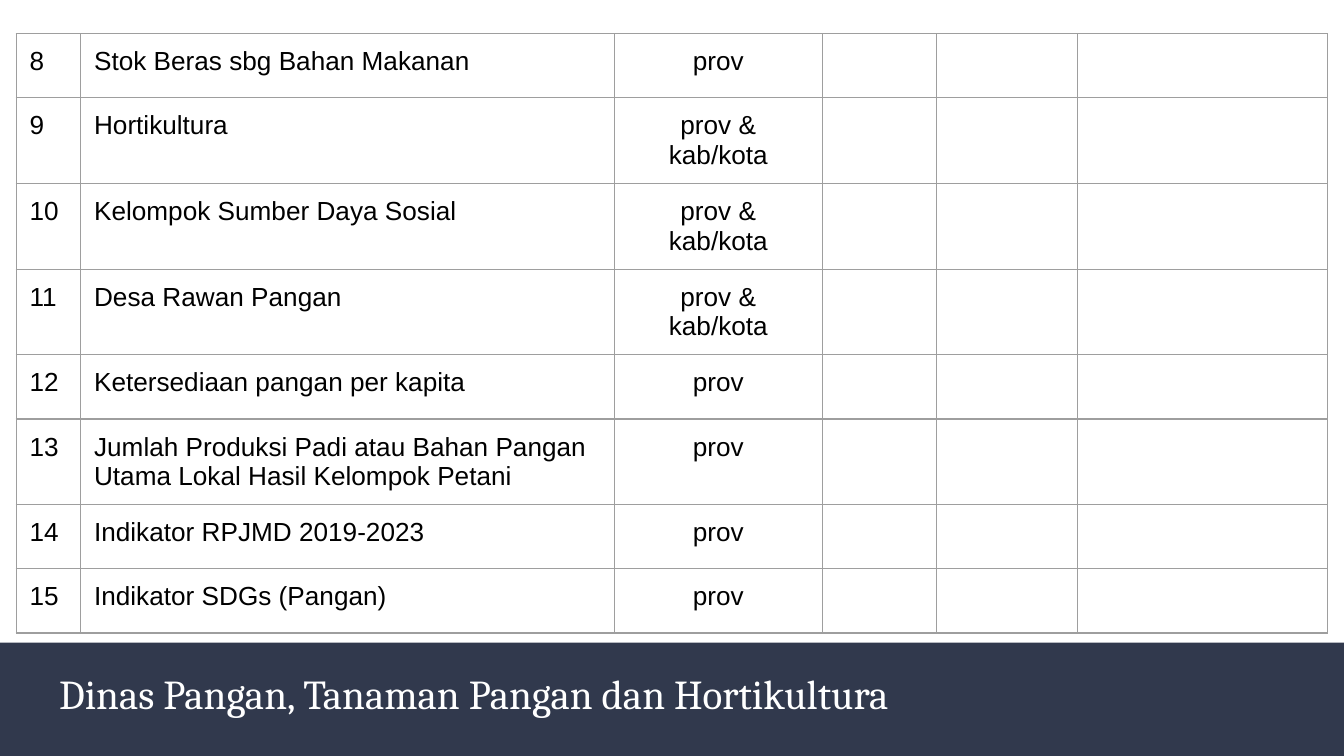
from lxml import etree
from pptx import Presentation
from pptx.dml.color import RGBColor as RGB
from pptx.enum import shapes, text
from pptx.oxml import ns
from pptx.util import Inches, Pt

theme = {
    "band": RGB.from_string("31394D"),
    "light": RGB.from_string("FFFFFF"),
    "ink": RGB.from_string("000000"),
    "rule": "9E9E9E",
    "head": ("Cambria", Pt(22)),
    "cell": ("Arial", Pt(14)),
}


def style(par, kind, color):
    par.font.name, par.font.size = theme[kind]
    par.font.color.rgb = theme[color]


def border(cell):
    props = cell._tc.get_or_add_tcPr()
    for side in ("lnL", "lnR", "lnT", "lnB"):
        line = etree.SubElement(props, ns.qn(f"a:{side}"), w=str(Pt(0.75)))
        fill = etree.SubElement(line, ns.qn("a:solidFill"))
        etree.SubElement(fill, ns.qn("a:srgbClr"), val=theme["rule"])


# Widescreen slide, 16 by 9
deck = Presentation()
wide = Inches(10)
high = wide * 9 // 16
deck.slide_width, deck.slide_height = wide, high
slide = deck.slides.add_slide(deck.slide_layouts[2])
title = slide.shapes.title
title._element.getparent().remove(title._element)

# Footer band, behind the heading
top = int(high * 0.85)
band = slide.shapes.add_shape(
    shapes.MSO_SHAPE.RECTANGLE, 0, top, wide, high - top)
band.shadow.inherit = False
band.fill.solid()
band.fill.fore_color.rgb = theme["band"]
band.line.fill.background()
slide.shapes._spTree.insert(2, band._element)

# Heading in the band
head = slide.placeholders[1]
head.left, head.top = Inches(0.34), Inches(4.94)
head.width, head.height = Inches(8.73), Inches(0.5)
frame = head.text_frame
frame.text = "Dinas Pangan, Tanaman Pangan dan Hortikultura"
frame.word_wrap = True
frame.auto_size = text.MSO_AUTO_SIZE.NONE
frame.vertical_anchor = text.MSO_ANCHOR.MIDDLE
frame.margin_left = frame.margin_right = Inches(0.1)
frame.margin_top = frame.margin_bottom = Inches(0.1)
par = frame.paragraphs[0]
par.alignment = text.PP_ALIGN.LEFT
par.line_spacing = 0.8
par.space_before = Pt(0)
style(par, "head", "light")

# Table data: name, level and number of text lines
both = "prov & kab/kota"
items = [
    ("Stok Beras sbg Bahan Makanan", "prov", 1),
    ("Hortikultura", both, 2),
    ("Kelompok Sumber Daya Sosial", both, 2),
    ("Desa Rawan Pangan", both, 2),
    ("Ketersediaan pangan per kapita", "prov", 1),
    ("Jumlah Produksi Padi atau Bahan Pangan Utama Lokal Hasil Kelompok Petani",
     "prov", 2),
    ("Indikator RPJMD 2019-2023", "prov", 1),
    ("Indikator SDGs (Pangan)", "prov", 1),
]
cols = [0.48, 3.97, 1.55, 0.85, 1.05, 1.86]

# Table grid: a row takes two units of height plus one per text line
units = [2 + lines for _, _, lines in items]
tall = Inches(4.46)
table = slide.shapes.add_table(
    len(units), len(cols), Inches(0.12), Inches(0.25),
    Inches(sum(cols)), tall).table
table.first_row = table.horz_banding = False
for col, size in zip(table.columns, cols):
    col.width = Inches(size)
for row, unit in zip(table.rows, units):
    row.height = tall * unit // sum(units)
for cell in table.iter_cells():
    border(cell)
    cell.fill.background()

# Table text, numbered from 8; the last three columns stay blank
for num, (row, (name, level, _)) in enumerate(zip(table.rows, items), 8):
    for cell, words in zip(row.cells, (str(num), name, level)):
        cell.text = words
        cell.margin_left = cell.margin_right = Inches(0.1)
        cell.margin_top = cell.margin_bottom = Inches(0.1)
        style(cell.text_frame.paragraphs[0], "cell", "ink")
    row.cells[2].text_frame.paragraphs[0].alignment = text.PP_ALIGN.CENTER

deck.save("out.pptx")
